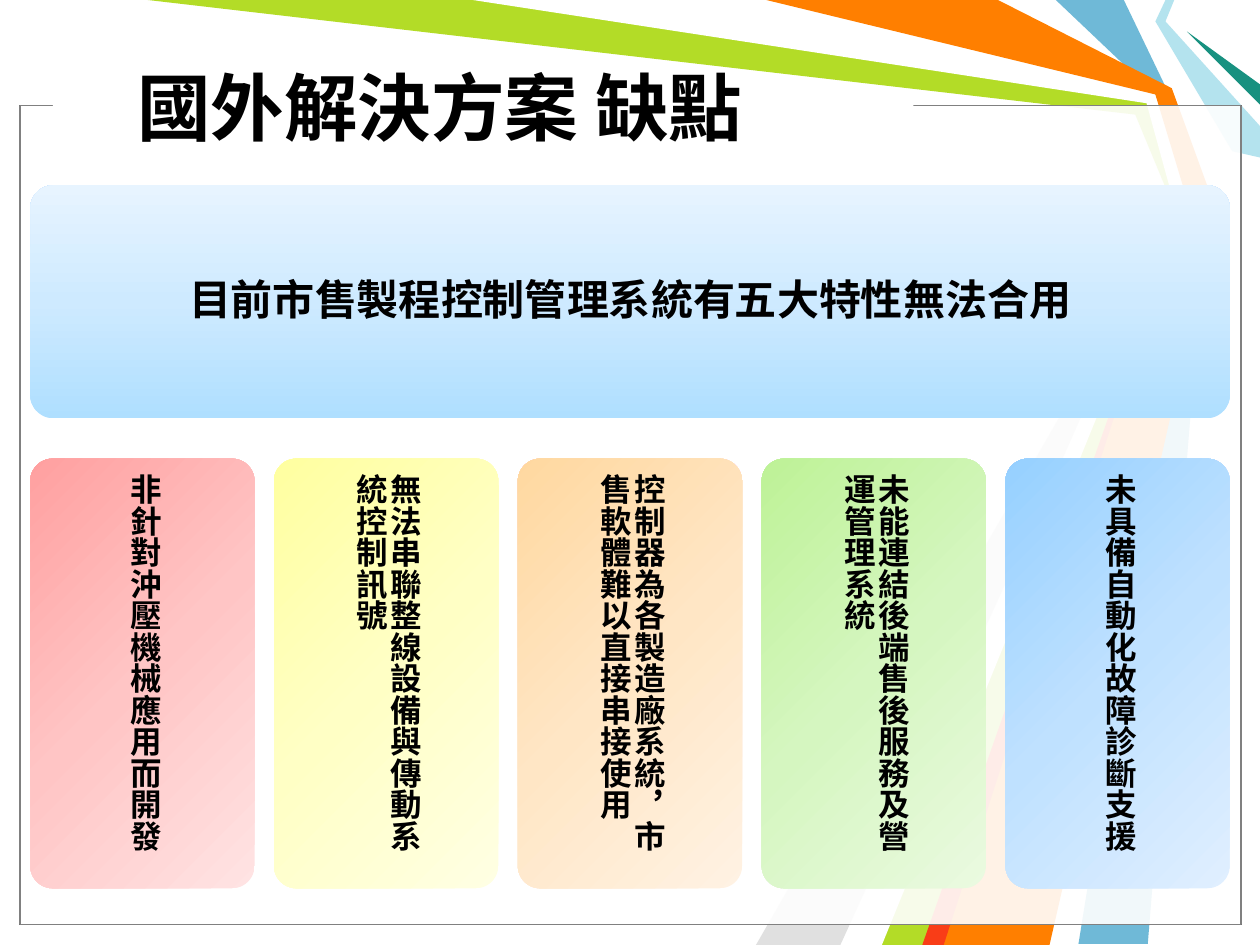
from lxml import etree
from pptx import Presentation
from pptx import util as u
from pptx.dml.color import RGBColor
from pptx.enum import shapes, text
from pptx.oxml import parse_xml
from pptx.oxml.ns import nsdecls, qn

COLORS = {
    "black": "000000", "white": "FFFFFF", "gray": "808080", "silver": "E0E0E0",
    "blue": "6FB9D7", "lime": "B3DC27", "aqua": "B4E3EE", "teal": "189180",
    "orange": "FF7F00", "red": "F93D17",
}
Inches = u.Inches

presentation = Presentation()
presentation.slide_width, presentation.slide_height = Inches(10), Inches(7.5)
slide = presentation.slides.add_slide(presentation.slide_layouts[5])


def paint(shape, fill, line=None):
    shape.shadow.inherit = False
    shape.fill.solid()
    shape.fill.fore_color.rgb = RGBColor.from_string(COLORS[fill])
    if line:
        shape.line.color.rgb = RGBColor.from_string(COLORS[line])
        shape.line.width = u.Pt(0.75)
    else:
        shape.line.fill.background()


def add_card(box, stops, direction, size, margin, label):
    """Add a rounded card with a gradient fill and a bold label."""
    card = slide.shapes.add_shape(
        shapes.MSO_SHAPE.ROUNDED_RECTANGLE, *[Inches(v) for v in box])
    card.adjustments[0] = 0.1
    card.shadow.inherit = False
    card.line.fill.background()
    marks = "".join(
        f'<a:gs pos="{position}"><a:srgbClr val="{color}"/></a:gs>'
        for position, color in zip((0, 50000, 100000), stops))
    gradient = parse_xml(f'<a:gradFill {nsdecls("a")} rotWithShape="1">'
                         f'<a:gsLst>{marks}</a:gsLst>{direction}</a:gradFill>')
    card._element.spPr.find(qn("a:prstGeom")).addnext(gradient)

    frame = card.text_frame
    frame.word_wrap = True
    frame.vertical_anchor = text.MSO_ANCHOR.MIDDLE
    frame.margin_left = frame.margin_right = Inches(margin)
    frame.margin_top = frame.margin_bottom = Inches(margin)
    paragraph = frame.paragraphs[0]
    paragraph.text = label
    paragraph.line_spacing = 0.9
    paragraph.alignment = text.PP_ALIGN.CENTER
    paragraph.font.name = "Arial"
    paragraph.font.size = u.Pt(size)
    paragraph.font.bold = True
    paragraph.font.color.rgb = RGBColor.from_string(COLORS["black"])
    return card


# Background ribbons, back to front, in hundredths of an inch
ribbons = [
    ("blue", [(892, 0), (929, 77), (958, 167), (911, 749), (856, 749),
              (950, 167), (917, 75), (838, 0)]),
    ("lime", [(117, 0), (383, 0), (914, 78), (942, 169), (742, 750),
              (692, 750), (935, 173), (901, 91)]),
    ("silver", [(667, 750), (927, 181), (600, 750)]),
    ("white", [(375, 0), (910, 82), (932, 162), (675, 750), (700, 750),
               (941, 158), (917, 75), (600, 0)]),
    ("aqua", [(925, 0), (917, 17), (978, 120), (1000, 125), (1000, 100),
              (925, 17), (932, 0)]),
    ("teal", [(1000, 83), (942, 25), (1000, 67)]),
    ("orange", [(608, 0), (792, 0), (930, 70), (966, 169), (833, 750),
                (733, 750), (942, 158), (917, 75)]),
    ("red", [(732, 750), (932, 183), (749, 750)]),
]
for color, points in ribbons:
    builder = slide.shapes.build_freeform(*points[0], scale=Inches(0.01))
    builder.add_line_segments(points[1:], close=True)
    paint(builder.convert_to_shape(), color)

# Translucent framed panel, laid twice
for line in ("black", "gray"):
    panel = slide.shapes.add_shape(
        shapes.MSO_SHAPE.RECTANGLE,
        Inches(0.16), Inches(0.84), Inches(9.69), Inches(6.5))
    paint(panel, "white", line)
    fill_color = panel._element.spPr.find(qn("a:solidFill"))[0]
    etree.SubElement(fill_color, qn("a:alpha")).set("val", "69000")

# Gap in the frame behind the title
gap = slide.shapes.add_shape(
    shapes.MSO_SHAPE.RECTANGLE,
    Inches(0.42), Inches(0.74), Inches(6.83), Inches(0.17))
paint(gap, "white")

# Title, brought in front of the background
title = slide.shapes.title
slide.shapes._spTree.append(title._element)
title.left, title.top = Inches(0.99), Inches(0.22)
title.width, title.height = Inches(6.89), Inches(1.25)
title.text_frame.vertical_anchor = text.MSO_ANCHOR.MIDDLE
paragraph = title.text_frame.paragraphs[0]
paragraph.text = "國外解決方案 缺點"
paragraph.alignment = text.PP_ALIGN.LEFT
paragraph.font.name = "Arial"
paragraph.font.size = u.Pt(42)
paragraph.font.bold = True
paragraph.font.color.rgb = RGBColor.from_string(COLORS["black"])

# Banner
add_card((0.24, 1.47, 9.52, 1.85), ("AFDFFF", "CEEAFF", "E7F4FF"),
         '<a:lin ang="16200000" scaled="0"/>', 24, 0.1,
         "目前市售製程控制管理系統有五大特性無法合用")

# Five shortcomings, set vertically
shortcomings = [
    ("非針對沖壓機械應用而開發", ("FFA0A0", "FFC5C5", "FFE3E3")),
    ("無法串聯整線設備與傳動系統控制訊號", ("FFFFA0", "FFFFC5", "FFFFE3")),
    ("控制器為各製造廠系統，市售軟體難以直接串接使用",
     ("FFD8A0", "FFE6C5", "FFF2E3")),
    ("未能連結後端售後服務及營運管理系統", ("BEF297", "D5F6C0", "EAFAE0")),
    ("未具備自動化故障診斷支援", ("96D0FF", "BFE1FF", "E0EFFF")),
]
from_corner = ('<a:path path="circle">'
               '<a:fillToRect r="100000" b="100000"/></a:path>')
card_width = 1.78
card_step = (9.52 - card_width) / 4
for index, (label, stops) in enumerate(shortcomings):
    card = add_card((0.24 + index * card_step, 3.64, card_width, 3.41),
                    stops, from_corner, 18, 0.07, label)
    card.text_frame.paragraphs[0].alignment = text.PP_ALIGN.LEFT
    card.text_frame._txBody.bodyPr.set("vert", "eaVert")

presentation.save("out.pptx")
